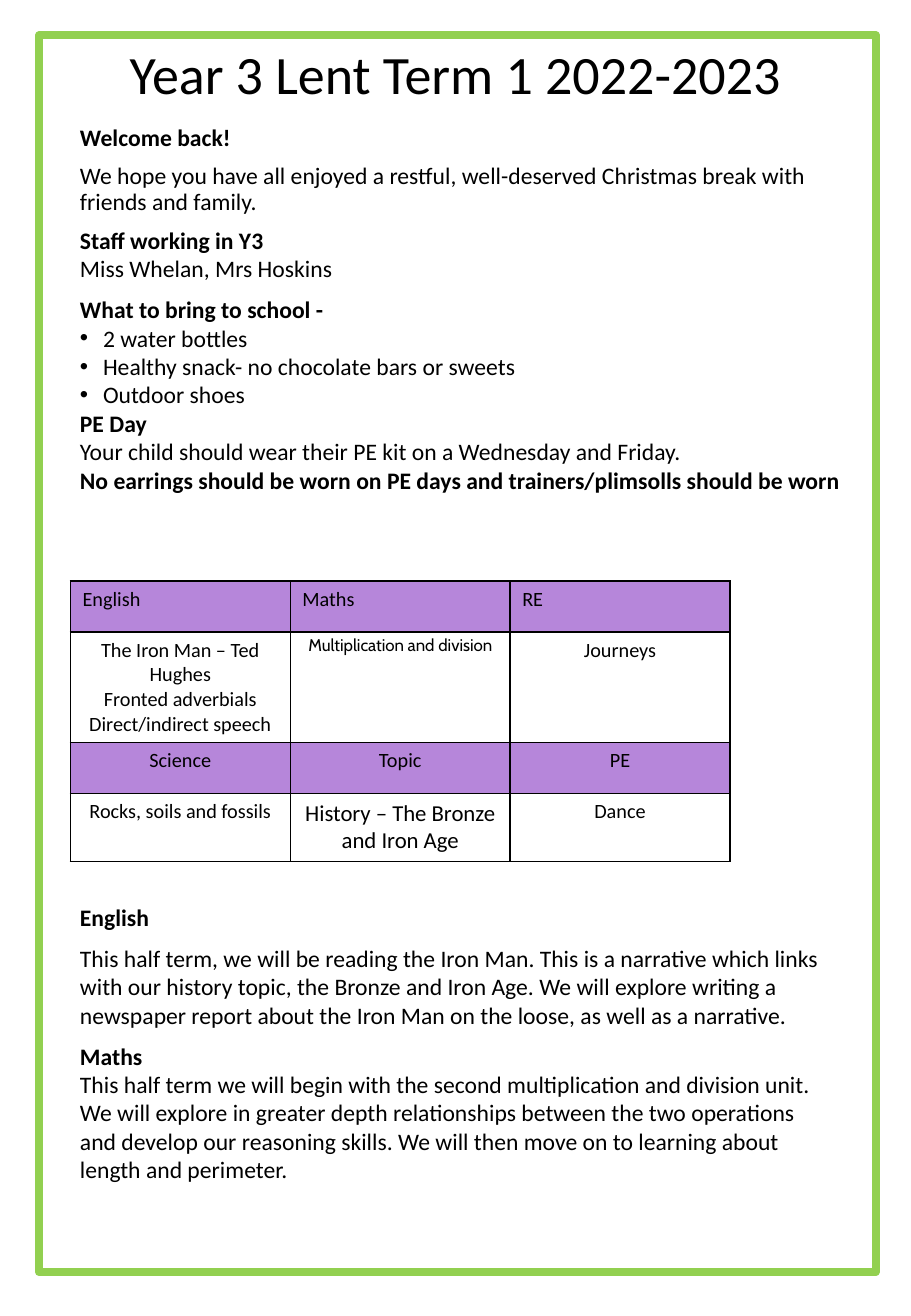
"""Build the Year 3 Lent Term newsletter page."""
from lxml.etree import SubElement
from pptx import Presentation
from pptx.dml.color import RGBColor
from pptx.enum.shapes import MSO_SHAPE
from pptx.enum.text import MSO_ANCHOR, PP_ALIGN
from pptx.oxml import parse_xml
from pptx.oxml.ns import nsdecls, qn
from pptx.util import Inches, Pt

BLACK = RGBColor(0x00, 0x00, 0x00)
WHITE = RGBColor(0xFF, 0xFF, 0xFF)
GREEN = RGBColor(0x92, 0xD0, 0x50)
PURPLE = RGBColor(0xB6, 0x86, 0xDA)
LEFT, WIDTH = 0.56, 6.38


def style(para, size, bold=False, face="Calibri"):
    for run in para.runs:
        run.font.name = face
        run.font.size = Pt(size)
        run.font.bold = bold
        run.font.color.rgb = BLACK


def add_text(top, width, height, lines, size=14, spacing=1.0):
    box = slide.shapes.add_textbox(Inches(LEFT), Inches(top), Inches(width), Inches(height))
    frame = box.text_frame
    frame.word_wrap = True
    frame.text = "\n".join(line[0] for line in lines)
    for para, (text, kind, before) in zip(frame.paragraphs, lines):
        para.line_spacing = spacing
        para.space_before = Pt(before)
        if kind == "bullet":
            props = para._p.get_or_add_pPr()
            props.set("marL", str(Inches(0.19)))
            props.set("indent", str(-Inches(0.19)))
            SubElement(props, qn("a:buFont")).set("typeface", "Arial")
            SubElement(props, qn("a:buChar")).set("char", "•")
        style(para, size, kind == "head")
    return frame


deck = Presentation()
deck.slide_width, deck.slide_height = Inches(7.5), Inches(10.83)
slide = deck.slides.add_slide(deck.slide_layouts[6])

border = slide.shapes.add_shape(
    MSO_SHAPE.RECTANGLE, Inches(0.32), Inches(0.29), Inches(6.89), Inches(10.18))
border.shadow.inherit = False
border.fill.background()
border.line.color.rgb = GREEN
border.line.width = Pt(4.5)
SubElement(border.line._get_or_add_ln(), qn("a:round"))

title = add_text(0.31, WIDTH, 0.61, [("Year 3 Lent Term 1 2022-2023", "body", 0)], 32, 0.9)
title.vertical_anchor = MSO_ANCHOR.BOTTOM
title.paragraphs[0].alignment = PP_ALIGN.CENTER

add_text(0.99, WIDTH, 0.8, [
    ("Welcome back!", "head", 0),
    ("We hope you have all enjoyed a restful, well-deserved Christmas break with "
     "friends and family.", "body", 7.5),
], spacing=0.9)

add_text(1.81, WIDTH, 0.57, [
    ("Staff working in Y3", "head", 0),
    ("Miss Whelan, Mrs Hoskins", "body", 0),
])

add_text(2.38, 6.5, 1.75, [
    ("What to bring to school -", "head", 0),
    ("2 water bottles", "bullet", 0),
    ("Healthy snack- no chocolate bars or sweets", "bullet", 0),
    ("Outdoor shoes", "bullet", 0),
    ("PE Day", "head", 0),
    ("Your child should wear their PE kit on a Wednesday and Friday.", "body", 0),
    ("No earrings should be worn on PE days and trainers/plimsolls should be worn", "head", 0),
])

topics = [
    ["English", "Maths", "RE"],
    ["The Iron Man – Ted Hughes\nFronted adverbials\nDirect/indirect speech",
     "Multiplication and division", "Journeys"],
    ["Science", "Topic", "PE"],
    ["Rocks, soils and fossils", "History – The Bronze and Iron Age", "Dance"],
]
heights = [0.42, 0.91, 0.42, 0.56]
table = slide.shapes.add_table(
    4, 3, Inches(0.58), Inches(4.78), Inches(5.43), Inches(sum(heights))).table
for col in table.columns:
    col.width = Inches(1.81)
for r, (names, height) in enumerate(zip(topics, heights)):
    table.rows[r].height = Inches(height)
    for c, name in enumerate(names):
        cell = table.cell(r, c)
        cell.text_frame.text = name
        cell.fill.solid()
        cell.fill.fore_color.rgb = WHITE if r % 2 else PURPLE
        for para in cell.text_frame.paragraphs:
            para.alignment = PP_ALIGN.CENTER if r else PP_ALIGN.LEFT
            style(para, 13.5 if (r, c) == (3, 1) else 12)
        props = cell._tc.get_or_add_tcPr()
        for spot, side in enumerate(("lnL", "lnR", "lnT", "lnB")):
            props.insert(spot, parse_xml(
                f'<a:{side} {nsdecls("a")} w="{Pt(1)}"><a:solidFill>'
                f'<a:srgbClr val="{BLACK}"/></a:solidFill></a:{side}>'))

maths = table.cell(1, 1)
maths.margin_left = maths.margin_right = Inches(0.12)
maths.margin_top = maths.margin_bottom = 0
para = maths.text_frame.paragraphs[0]
para.line_spacing = 1.15
para.space_after = Pt(10)
style(para, 10, face="Cabin")

add_text(7.38, WIDTH, 3.0, [
    ("English", "head", 0),
    ("This half term, we will be reading the Iron Man. This is a narrative which links "
     "with our history topic, the Bronze and Iron Age. We will explore writing a newspaper "
     "report about the Iron Man on the loose, as well as a narrative.", "body", 7.5),
    ("Maths", "head", 7.5),
    ("This half term we will begin with the second multiplication and division unit. "
     "We will explore in greater depth relationships between the two operations and develop "
     "our reasoning skills. We will then move on to learning about length and perimeter.",
     "body", 0),
])

deck.save("out.pptx")
